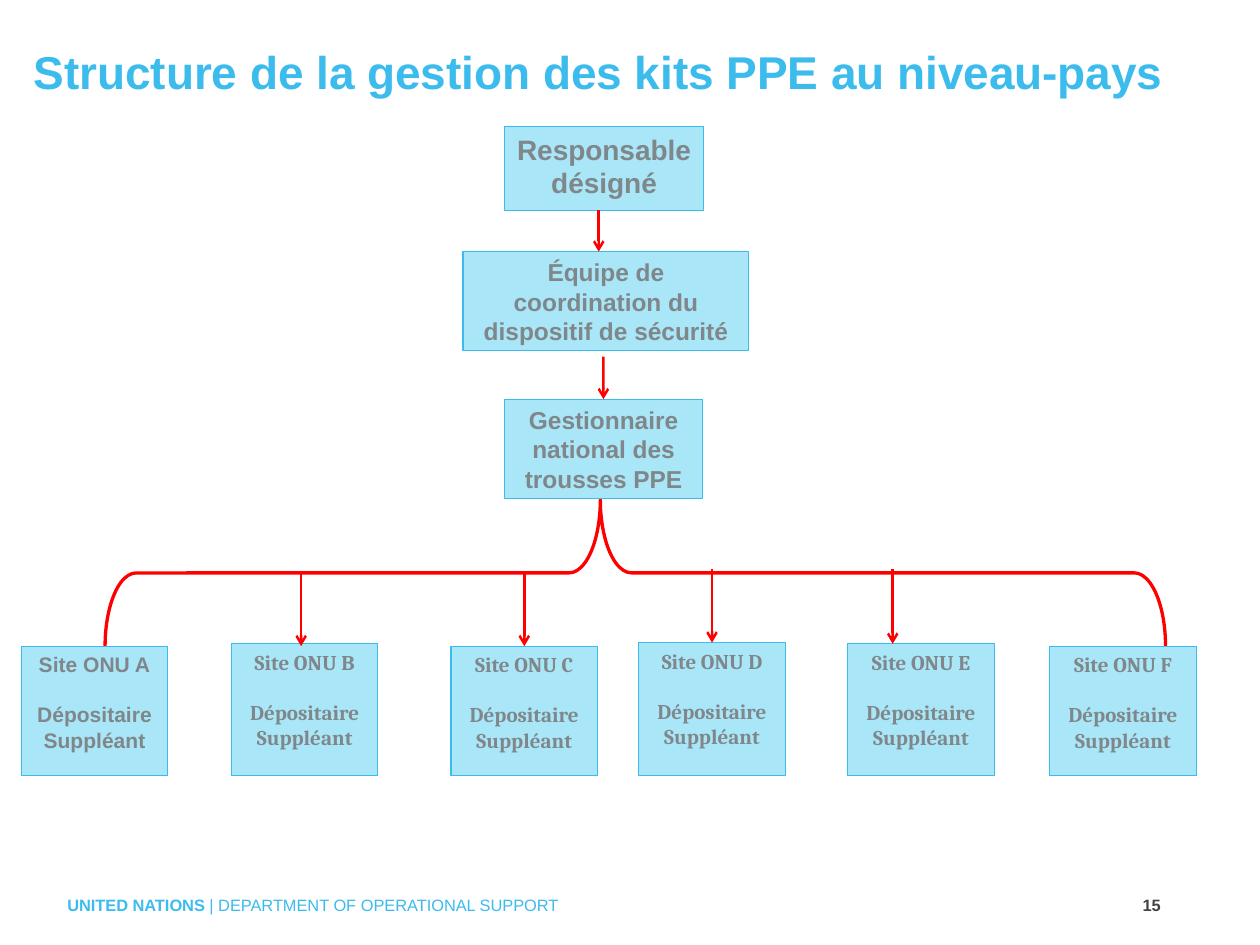
"""Build the organisation chart of PPE kit management at country level."""
from dataclasses import dataclass
from typing import Optional

import pptx
import pptx.dml.color
import pptx.enum.shapes
import pptx.enum.text
import pptx.util
from lxml import etree
from pptx.oxml.ns import qn

WIDTH = pptx.util.Inches(10.67)
HEIGHT = pptx.util.Inches(8)
COLOURS = {"sky": "3CBBED", "ice": "A8E6F8", "grey": "80878A", "red": "FF0000", "dark": "404445"}
ALIGN = pptx.enum.text.PP_ALIGN
ANCHOR = pptx.enum.text.MSO_ANCHOR
SHAPE = pptx.enum.shapes.MSO_SHAPE


@dataclass
class Area:
    left: float
    top: float
    width: float
    height: float


@dataclass
class Unit:
    name: str
    area: Area
    size: float
    font: str = "Arial"
    roles: tuple[str, ...] = ()


@dataclass
class Arrow:
    x: float
    top: float
    bottom: float
    target: Optional[str] = None


SITE_WIDTH, SITE_BOTTOM = 11.62, 82.1
SITES = [("A", 1.69, 68.38, "Arial"), ("B", 18.37, 68.13, "Cambria"), ("C", 35.8, 68.38, "Cambria"),
         ("D", 50.7, 68, "Cambria"), ("E", 67.29, 68.13, "Cambria"), ("F", 83.32, 68.38, "Cambria")]
MANAGER = "Gestionnaire national des trousses PPE"
UNITS = [
    Unit("Responsable désigné", Area(40.02, 13.38, 15.84, 8.88), 17.1),
    Unit("Équipe de coordination du dispositif de sécurité", Area(36.74, 26.63, 22.68, 10.5), 14.9),
    Unit(MANAGER, Area(40.02, 42.25, 15.75, 10.5), 14.9),
] + [
    Unit(f"Site ONU {letter}", Area(left, top, SITE_WIDTH, SITE_BOTTOM - top), 12.8, font,
         ("Dépositaire", "Suppléant"))
    for letter, left, top, font in SITES
]
ARROWS = [
    Arrow(47.52, 22.25, 26.63),
    Arrow(47.89, 37.75, 42.25, MANAGER),
    Arrow(23.9, 60.5, 68.38),
    Arrow(41.61, 60.5, 68.38, "Site ONU C"),
    Arrow(56.51, 60.25, 68, "Site ONU D"),
    Arrow(70.85, 60.25, 68.13),
]


def across(share: float) -> int:
    """Turn a percentage of the slide's width into a length."""
    return round(WIDTH * share / 100)


def down(share: float) -> int:
    """Turn a percentage of the slide's height into a length."""
    return round(HEIGHT * share / 100)


def bounds(area: Area) -> tuple[int, int, int, int]:
    """Give the left, top, width and height of an area."""
    return across(area.left), down(area.top), across(area.width), down(area.height)


def colour(name: str) -> pptx.dml.color.RGBColor:
    """Look up a palette colour."""
    return pptx.dml.color.RGBColor.from_string(COLOURS[name])


def write(paragraph, text: str, size: float, tint: str, font: str = "Arial", bold: bool = True) -> None:
    """Add one formatted run to a paragraph."""
    run = paragraph.add_run()
    run.text = text
    run.font.size = pptx.util.Pt(size)
    run.font.name = font
    run.font.bold = bold
    run.font.color.rgb = colour(tint)


def frame_text(shape, anchor, bottom: float = 0):
    """Set up a text frame without insets and return it."""
    frame = shape.text_frame
    frame.word_wrap = True
    frame.auto_size = pptx.enum.text.MSO_AUTO_SIZE.NONE
    frame.vertical_anchor = anchor
    frame.margin_left = frame.margin_right = frame.margin_top = 0
    frame.margin_bottom = pptx.util.Inches(bottom)
    return frame


def draw_title(slide) -> None:
    """Fill and place the title placeholder."""
    title = slide.shapes.title
    title.left, title.top, title.width, title.height = bounds(Area(2.06, 4.75, 90.82, 6.38))
    heading = frame_text(title, ANCHOR.BOTTOM, 0.05).paragraphs[0]
    heading.alignment = ALIGN.CENTER
    write(heading, "Structure de la gestion des kits PPE au niveau-pays", 28, "sky")


def draw_footer(slide, area: Area, alignment, parts: list[tuple[str, str, bool]]) -> None:
    """Draw one footer text made of several runs."""
    footer = slide.shapes.add_textbox(*bounds(area))
    line = frame_text(footer, ANCHOR.BOTTOM).paragraphs[0]
    line.alignment = alignment
    for text, tint, bold in parts:
        write(line, text, 10, tint, bold=bold)


def draw_brace(slide) -> None:
    """Draw the brace that spreads from the manager to the sites."""
    brace = slide.shapes.add_shape(SHAPE.LEFT_BRACE, *bounds(Area(44.61, 4.5, 11.62, 112.25)))
    brace.rotation = 90
    brace.adjustments[0] = 0.213
    brace.adjustments[1] = 0.533
    brace.shadow.inherit = False
    brace.fill.background()
    brace.line.color.rgb = colour("red")
    brace.line.width = pptx.util.Pt(2)


def draw_unit(slide, unit: Unit):
    """Draw one box of the chart and return it."""
    box = slide.shapes.add_shape(SHAPE.RECTANGLE, *bounds(unit.area))
    box.shadow.inherit = False
    box.fill.solid()
    box.fill.fore_color.rgb = colour("ice")
    box.line.color.rgb = colour("sky")
    box.line.width = pptx.util.Pt(0.75)
    frame = box.text_frame
    frame.word_wrap = True
    frame.vertical_anchor = ANCHOR.TOP
    for position, text in enumerate((unit.name, *unit.roles)):
        line = frame.add_paragraph() if position else frame.paragraphs[0]
        line.alignment = ALIGN.CENTER
        if position == 1:
            line.space_before = pptx.util.Pt(15)
        write(line, text, unit.size, "grey", unit.font)
    return box


def draw_arrow(slide, arrow: Arrow, boxes: dict) -> None:
    """Draw a downward arrow, joined to its target's top when it has one."""
    x = across(arrow.x)
    link = slide.shapes.add_connector(pptx.enum.shapes.MSO_CONNECTOR.STRAIGHT,
                                      x, down(arrow.top), x, down(arrow.bottom))
    if arrow.target:
        link.end_connect(boxes[arrow.target], 0)
    link.line.color.rgb = colour("red")
    link.line.width = pptx.util.Pt(1.5)
    etree.SubElement(link.line._get_or_add_ln(), qn("a:tailEnd"), type="arrow")
    etree.SubElement(link._element.spPr, qn("a:effectLst"))


def main() -> None:
    """Build and save the presentation."""
    deck = pptx.Presentation()
    deck.slide_width, deck.slide_height = WIDTH, HEIGHT
    slide = deck.slides.add_slide(deck.slide_layouts[5])
    draw_title(slide)
    draw_footer(slide, Area(5.34, 94.63, 45.55, 2.13), ALIGN.LEFT,
                [("UNITED NATIONS ", "sky", True), ("| DEPARTMENT OF OPERATIONAL SUPPORT", "sky", False)])
    draw_footer(slide, Area(82.29, 94.63, 9.84, 2.13), ALIGN.RIGHT, [("15", "dark", True)])
    draw_brace(slide)
    boxes = {unit.name: draw_unit(slide, unit) for unit in UNITS}
    for arrow in ARROWS:
        draw_arrow(slide, arrow, boxes)
    deck.save("out.pptx")


if __name__ == "__main__":
    main()
